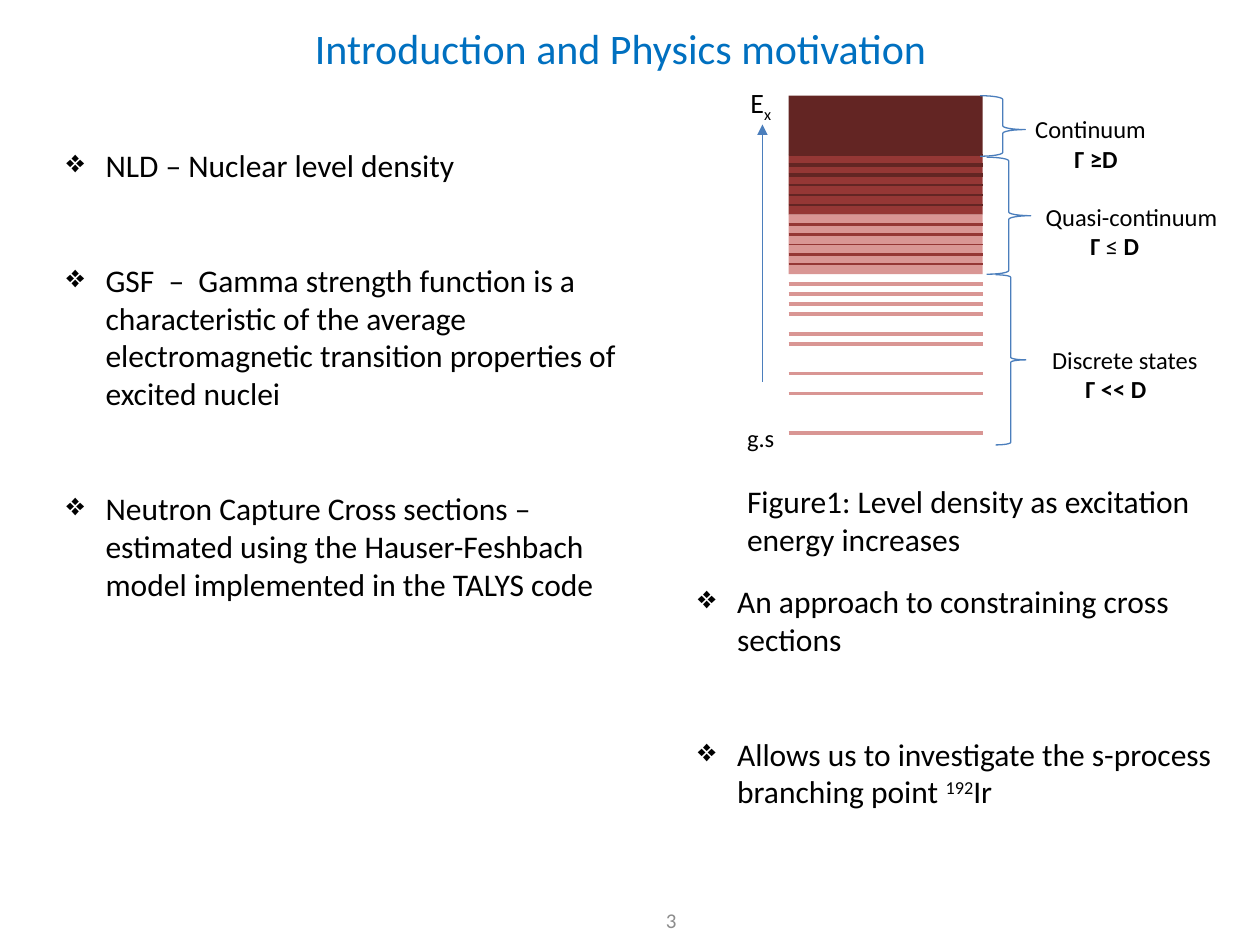
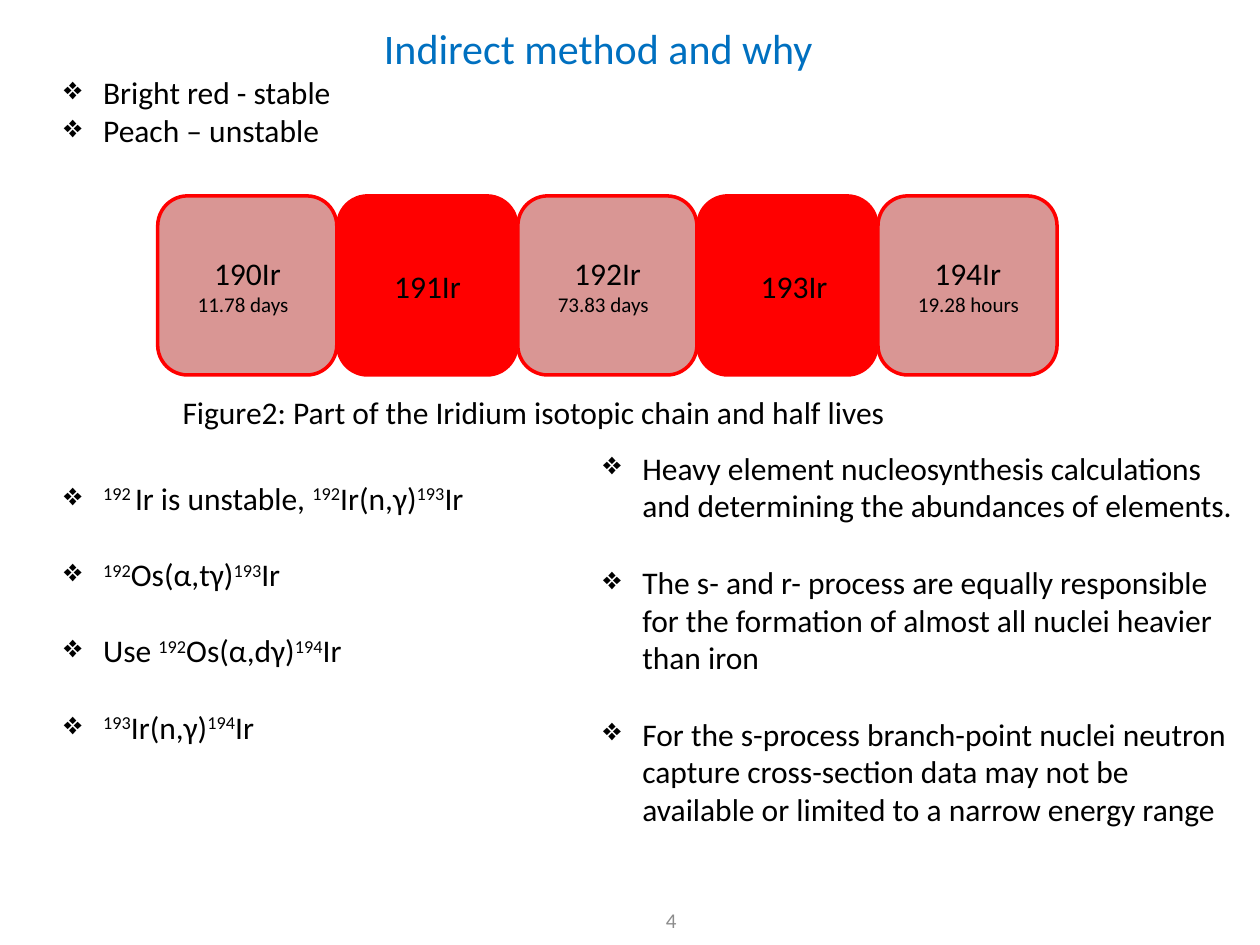
from lxml import etree
from pptx import Presentation
from pptx.dml.color import RGBColor
from pptx.enum.shapes import MSO_CONNECTOR, MSO_SHAPE
from pptx.enum.text import MSO_ANCHOR, PP_ALIGN
from pptx.oxml.ns import qn
from pptx.util import Cm, Pt

STRAIGHT = MSO_CONNECTOR.STRAIGHT
RECTANGLE = MSO_SHAPE.RECTANGLE
ROUNDED = MSO_SHAPE.ROUNDED_RECTANGLE
BRACE = MSO_SHAPE.RIGHT_BRACE
MIDDLE = MSO_ANCHOR.MIDDLE
LEFT = PP_ALIGN.LEFT
RIGHT = PP_ALIGN.RIGHT

FONT = "Calibri"
COLORS = {
    "title": "0070C0",
    "text": "000000",
    "number": "8C8C8C",
    "dark": "632523",
    "medium": "953735",
    "light": "D99694",
    "stable": "FF0000",
    "line": "4B7EBC",
}
BASELINES = {"^": "30000", "_": "-25000"}
BULLET_INDENT = 0.79
LINE_HEIGHT = 22


def color(name):
    return RGBColor.from_string(COLORS[name])


def write(paragraph, text, size=18, ink="text", bold=False, align=LEFT,
          indent=0, bullet=False, before=0):
    properties = paragraph._p.get_or_add_pPr()
    if bullet:
        properties.set("marL", str(Cm(BULLET_INDENT)))
        properties.set("indent", str(-Cm(BULLET_INDENT)))
        etree.SubElement(properties, qn("a:buChar")).set("char", "❖")
    elif indent:
        properties.set("marL", str(Cm(indent)))
    paragraph.alignment = align
    if before:
        paragraph.space_before = Pt(before)
    for part in filter(None, text.split("|")):
        marker = part[0]
        run = paragraph.add_run()
        run.text = part[1:] if marker in "^_~" else part
        run.font.name = FONT
        run.font.size = Pt(size)
        run.font.bold = bold and marker != "~"
        run.font.color.rgb = color(ink)
        if marker in BASELINES:
            run._r.get_or_add_rPr().set("baseline", BASELINES[marker])


def add_text(slide, box, text, anchor=None, **style):
    shape = slide.shapes.add_textbox(*map(Cm, box))
    frame = shape.text_frame
    frame.word_wrap = True
    if anchor is not None:
        frame.vertical_anchor = anchor
    write(frame.paragraphs[0], text, **style)
    return frame


def add_bullets(slide, box, items, blank_lines=0):
    frame = add_text(slide, box, items[0], bullet=True)
    for item in items[1:]:
        write(frame.add_paragraph(), item, bullet=True,
              before=blank_lines * LINE_HEIGHT)


def add_shape(slide, kind, box, fill=None, line=None, width=0.75):
    shape = slide.shapes.add_shape(kind, *map(Cm, box))
    shape.shadow.inherit = False
    if fill:
        shape.fill.solid()
        shape.fill.fore_color.rgb = color(fill)
    else:
        shape.fill.background()
    if line:
        shape.line.color.rgb = color(line)
        shape.line.width = Pt(width)
    else:
        shape.line.fill.background()
    return shape


def add_line(slide, start, end, ink, width, arrow=False):
    connector = slide.shapes.add_connector(STRAIGHT, *map(Cm, start + end))
    connector.line.color.rgb = color(ink)
    connector.line.width = Pt(width)
    if arrow:
        outline = connector.line._get_or_add_ln()
        etree.SubElement(outline, qn("a:tailEnd")).set("type", "triangle")
    etree.SubElement(connector._element.spPr, qn("a:effectLst"))


def add_page(presentation, title, title_left, number):
    slide = presentation.slides.add_slide(presentation.slide_layouts[6])
    add_text(slide, (title_left, 0.33, 14, 1.27), title, size=24, ink="title")
    add_text(slide, (12.09, 18.03, 1.8, 1.02), str(number), size=12,
             ink="number", align=RIGHT, anchor=MIDDLE)
    return slide


def add_level_scheme(slide, left, top):
    width, slot, band_slots = 3.91, 0.2, 6
    for index, fill in enumerate(("dark", "medium", "light")):
        height = slot * band_slots
        add_shape(slide, RECTANGLE,
                  (left, top + index * height, width, height), fill)

    levels = [
        ("dark", 2, (7, 8)),
        ("dark", 1.25, (6, 9, 10, 11)),
        ("medium", 2, (13, 14)),
        ("medium", 0.75, (15,)),
        ("medium", 1.25, (16, 17)),
        ("light", 2, (19, 20, 21, 22, 24, 25, 28, 30)),
        ("light", 2.5, (34,)),
    ]
    for ink, weight, slots in levels:
        for index in slots:
            y = top + index * slot
            add_line(slide, (left, y), (left + width, y), ink, weight)

    braces = [
        (3.86, 0, 0.91, 1.22, 0.56),
        (3.99, 1.24, 0.89, 2.36, 0.5),
        (4.17, 3.61, 0.61, 3.43, 0.5),
    ]
    for x, y, brace_width, height, point in braces:
        brace = add_shape(slide, BRACE,
                          (left + x, top + y, brace_width, height),
                          line="line")
        brace.adjustments[1] = point

    labels = [
        (4.72, 0.25, "Continuum", "Γ ≥D", 0.79),
        (4.93, 2.01, "Quasi-continuum", "Γ |~≤ |D", 0.9),
        (5.06, 4.9, "Discrete states", "Γ << D", 0.67),
    ]
    for x, y, region, condition, indent in labels:
        frame = add_text(slide, (left + x, top + y, 4.2, 1.45), region,
                         size=14)
        write(frame.add_paragraph(), condition, size=14, bold=True,
              indent=indent)

    axis = left - 0.53
    add_line(slide, (axis, top + 5.77), (axis, top + 0.58), "line", 0.75,
             arrow=True)
    add_text(slide, (left - 1.02, top - 0.33, 1.1, 0.94), "E|_x", size=16)
    add_text(slide, (left - 1.09, top + 6.48, 1.2, 0.86), "g.s", size=14)
    add_text(slide, (left - 1.09, top + 7.67, 10.08, 1.8),
             "Figure1: Level density as excitation energy increases")


def add_isotope_chain(slide, left, top):
    size, step = 3.61, 3.63
    isotopes = [
        ("190Ir", "11.78 days", 0.71),
        ("191Ir", None, 0.71),
        ("192Ir", "73.83 days", 0.71),
        ("193Ir", None, 0.84),
        ("194Ir", "19.28 hours", 0.71),
    ]
    for index, (name, half_life, indent) in enumerate(isotopes):
        tile = add_shape(slide, ROUNDED,
                         (left + index * step, top, size, size),
                         "light" if half_life else "stable", "stable", 2)
        frame = tile.text_frame
        frame.word_wrap = True
        frame.vertical_anchor = MIDDLE
        write(frame.paragraphs[0], name, indent=indent)
        if half_life:
            write(frame.add_paragraph(), half_life, size=12, indent=0.38)
    add_text(slide, (left + 0.25, top + 3.85, 15.5, 1.02),
             "Figure2: Part of the Iridium isotopic chain and half lives")


def build_motivation(presentation):
    slide = add_page(presentation, "Introduction and Physics motivation",
                     6.1, 3)
    add_bullets(slide, (1.09, 2.82, 11.99, 11.02), [
        "NLD – Nuclear level density",
        "GSF  –  Gamma strength function is a characteristic of the average "
        "electromagnetic transition properties of excited nuclei",
        "Neutron Capture Cross sections – estimated using the "
        "Hauser-Feshbach model implemented in the TALYS code",
    ], blank_lines=2)
    add_level_scheme(slide, 15.9, 1.93)
    add_bullets(slide, (13.82, 11.61, 11.51, 5.64), [
        "An approach to constraining cross sections",
        "Allows us to investigate the s-process branching point |^192|Ir",
    ], blank_lines=2)


def build_method(presentation):
    slide = add_page(presentation, "Indirect method and why", 7.49, 4)
    add_bullets(slide, (1.04, 1.35, 6.2, 1.8),
                ["Bright red - stable", "Peach – unstable"])
    add_isotope_chain(slide, 3.18, 3.95)
    add_bullets(slide, (1.04, 9.53, 9.58, 7.19), [
        "|^192 |Ir is unstable, |^192|Ir(n,γ)|^193|Ir",
        "|^192|Os(α,tγ)|^193|Ir",
        "Use |^192|Os(α,dγ)|^194|Ir",
        "|^193|Ir(n,γ)|^194|Ir",
    ], blank_lines=1)
    add_bullets(slide, (11.91, 8.92, 13.49, 10.13), [
        "Heavy element nucleosynthesis calculations and determining the "
        "abundances of elements.",
        "The s- and r- process are equally responsible for the formation of "
        "almost all nuclei heavier than iron",
        "For the s-process branch-point nuclei neutron capture cross-section "
        "data may not be available or limited to a narrow energy range",
    ], blank_lines=1)


def main():
    presentation = Presentation()
    presentation.slide_width = Cm(25.4)
    presentation.slide_height = Cm(19.05)
    build_motivation(presentation)
    build_method(presentation)
    presentation.save("out.pptx")


if __name__ == "__main__":
    main()
